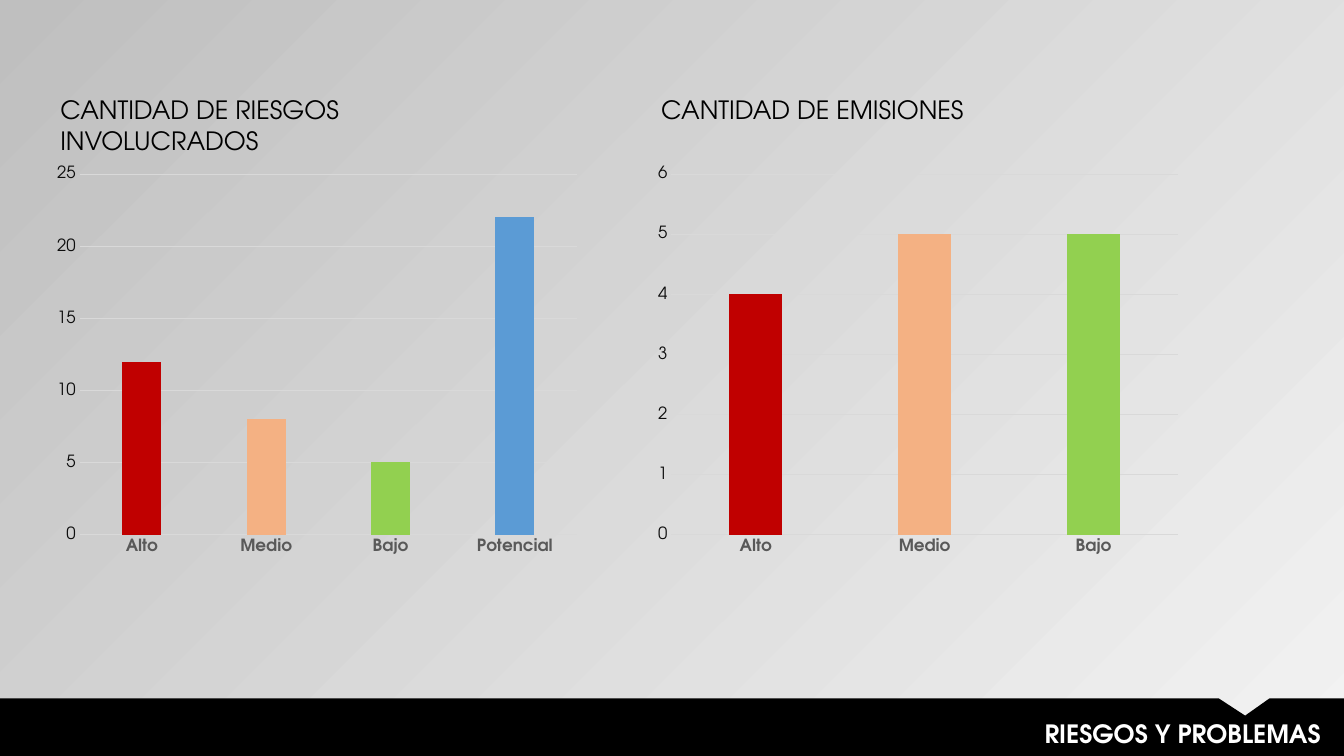
from dataclasses import dataclass

from pptx import Presentation
from pptx.chart.data import CategoryChartData
from pptx.dml.color import RGBColor
from pptx.enum.chart import XL_CHART_TYPE, XL_TICK_MARK
from pptx.enum.text import MSO_ANCHOR, MSO_AUTO_SIZE, PP_ALIGN
from pptx.util import Inches, Pt

COLUMNS = XL_CHART_TYPE.COLUMN_CLUSTERED
NO_TICK = XL_TICK_MARK.NONE
TOP = MSO_ANCHOR.TOP
GROW = MSO_AUTO_SIZE.SHAPE_TO_FIT_TEXT
RIGHT = PP_ALIGN.RIGHT


@dataclass(frozen=True)
class Theme:
    font: str = "TeX Gyre Adventor"
    heading_size: int = 18
    axis_size: int = 12
    chart_size: int = 10
    black: str = "000000"
    white: str = "FFFFFF"
    category_text: str = "595959"
    value_text: str = "0D0D0D"
    grid: str = "D9D9D9"
    gradient: tuple = ("F2F2F2", "BFBFBF")
    # High, medium, low, potential
    columns: tuple = ("C00000", "F4B183", "92D050", "5B9BD5")


THEME = Theme()


def set_font(font, size, color, bold=False):
    font.name = THEME.font
    font.size = Pt(size)
    font.bold = bold
    font.color.rgb = RGBColor.from_string(color)


def write_heading(box, text, color, bold=False, align=None):
    frame = box.text_frame
    frame.text = text
    frame.word_wrap = True
    frame.auto_size = GROW
    frame.vertical_anchor = TOP
    para = frame.paragraphs[0]
    para.alignment = align
    set_font(para.runs[0].font, THEME.heading_size, color, bold)


deck = Presentation()
deck.slide_width = Inches(13.33)
deck.slide_height = Inches(7.5)
page = deck.slides.add_slide(deck.slide_layouts[5])

# Background
background = page.background.fill
background.gradient()
background.gradient_angle = 135
for stop, color, position in zip(background.gradient_stops, THEME.gradient, (0, 1)):
    stop.color.rgb = RGBColor.from_string(color)
    stop.position = position

# Two headed charts: left edge, heading, values, axis maximum, axis step
panels = [
    (0.46, "CANTIDAD DE RIESGOS INVOLUCRADOS", (12, 8, 5, 22), 25, 5),
    (6.42, "CANTIDAD DE EMISIONES", (4, 5, 5), 6, 1),
]
categories = ("Alto", "Medio", "Bajo", "Potencial")

for left, heading, values, maximum, step in panels:
    data = CategoryChartData()
    data.categories = categories[:len(values)]
    data.add_series("Series 1", values)
    chart = page.shapes.add_chart(
        COLUMNS, Inches(left), Inches(1.57), Inches(5.37), Inches(4.01), data
    ).chart
    chart.has_title = False
    chart.has_legend = False
    set_font(chart.font, THEME.chart_size, THEME.black)

    plot = chart.plots[0]
    plot.gap_width = 219
    plot.overlap = -5
    plot.vary_by_categories = False
    series = plot.series[0]
    series.format.fill.solid()
    series.format.fill.fore_color.rgb = RGBColor.from_string(THEME.columns[-1])
    for index, color in enumerate(THEME.columns[:len(values)]):
        fill = series.points[index].format.fill
        fill.solid()
        fill.fore_color.rgb = RGBColor.from_string(color)

    category_axis, value_axis = chart.category_axis, chart.value_axis
    for axis in (category_axis, value_axis):
        axis.major_tick_mark = NO_TICK
        axis.minor_tick_mark = NO_TICK
    set_font(category_axis.tick_labels.font, THEME.axis_size, THEME.category_text, True)
    set_font(value_axis.tick_labels.font, THEME.axis_size, THEME.value_text)
    value_axis.minimum_scale = 0
    value_axis.maximum_scale = maximum
    value_axis.major_unit = step
    value_axis.format.line.fill.background()
    for line in (category_axis.format.line, value_axis.major_gridlines.format.line):
        line.color.rgb = RGBColor.from_string(THEME.grid)
        line.width = Pt(0.75)

    box = page.shapes.add_textbox(
        Inches(left + 0.04), Inches(0.89), Inches(4.44), Inches(0.4)
    )
    write_heading(box, heading, THEME.black)

# Footer band with a notch, in hundredths of an inch because points are whole numbers
outline = page.shapes.build_freeform(0, 693, scale=Inches(0.01))
outline.add_line_segments(
    [(1209, 693), (1235, 710), (1259, 693), (1333, 693), (1333, 750), (0, 750)]
)
band = outline.convert_to_shape()
band.shadow.inherit = False
band.fill.solid()
band.fill.fore_color.rgb = RGBColor.from_string(THEME.black)
band.line.fill.background()

# Slide title on top of the band
title = page.shapes.title
title.left, title.top = Inches(4.14), Inches(7.08)
title.width, title.height = Inches(9.06), Inches(0.4)
write_heading(title, "RIESGOS Y PROBLEMAS", THEME.white, True, RIGHT)
band.element.addnext(title.element)

deck.save("out.pptx")
